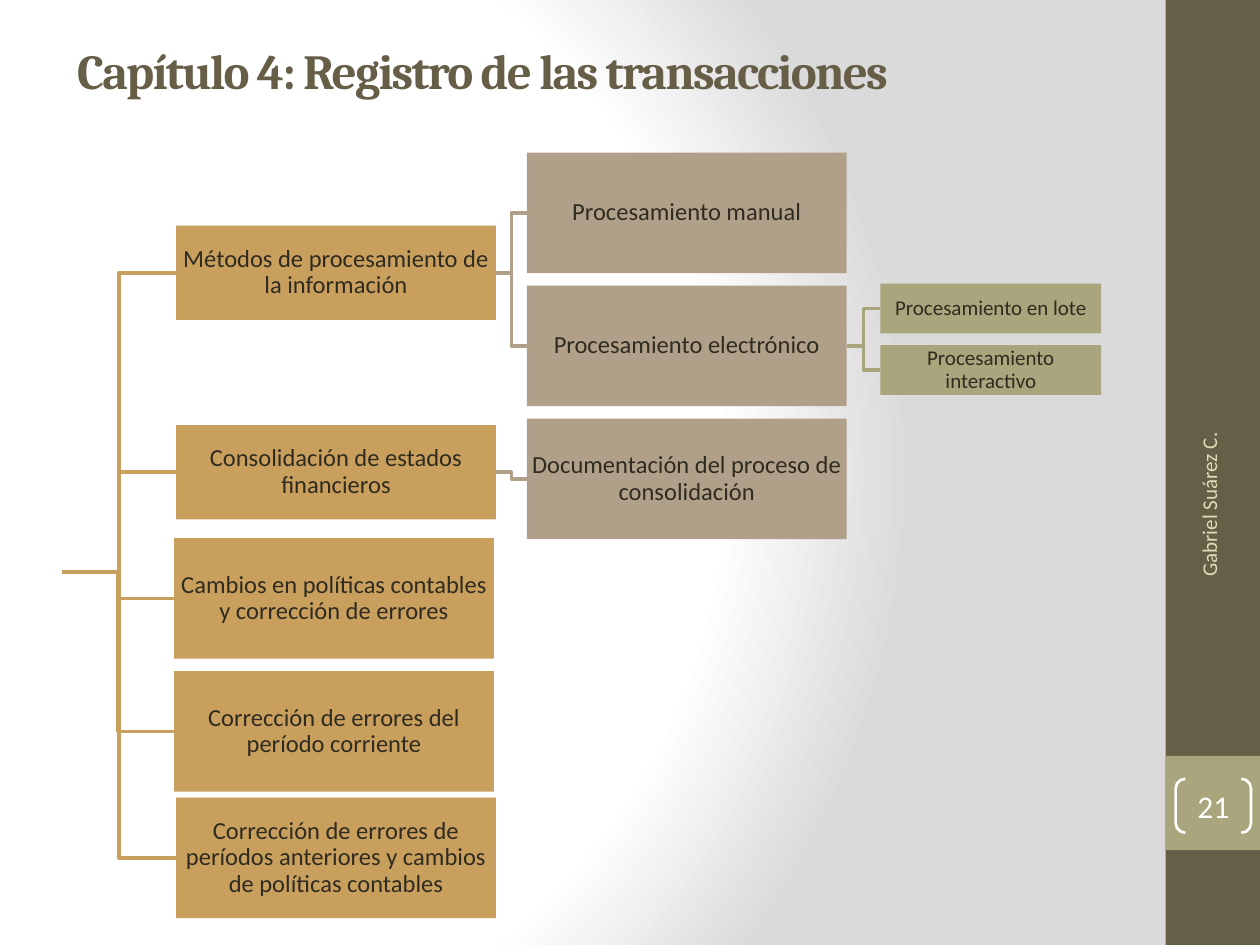
import pptx
import pptx.dml.color
import pptx.enum.shapes
import pptx.enum.text
import pptx.oxml
import pptx.oxml.ns
import pptx.util
from pptx.util import Cm

SHAPES = pptx.enum.shapes.MSO_SHAPE
ALIGN = pptx.enum.text.PP_ALIGN
COLORS = {
    "brown": "675E47", "green": "A9A57C", "gold": "C89F5D", "taupe": "B1A089",
    "ink": "2F2B20", "cream": "DFDCB7", "white": "FFFFFF", "gray": "DADADA",
}

TITLE = "Capítulo 4: Registro de las transacciones"
AUTHOR = "Gabriel Suárez C."
PAGE_NUMBER = "21"

# Levels of the tree: width in cm, text size in points, colour
LEVELS = {
    "topic": (6.45, 14, "gold"),
    "detail": (6.45, 14, "taupe"),
    "mode": (4.45, 12, "green"),
}
ROOT = (1.25, 11.53)

# name: (level, parent, left, top, height, text), lengths in cm
BOXES = {
    "methods": ("topic", None, 3.55, 4.55, 1.9, "Métodos de procesamiento de la información"),
    "manual": ("detail", "methods", 10.62, 3.08, 2.43, "Procesamiento manual"),
    "electronic": ("detail", "methods", 10.62, 5.76, 2.43, "Procesamiento electrónico"),
    "batch": ("mode", "electronic", 17.75, 5.72, 1, "Procesamiento en lote"),
    "interactive": ("mode", "electronic", 17.75, 6.96, 1, "Procesamiento interactivo"),
    "consolidation": ("topic", None, 3.55, 8.57, 1.9, "Consolidación de estados financieros"),
    "documentation": ("detail", "consolidation", 10.62, 8.44, 2.43,
                      "Documentación del proceso de consolidación"),
    "changes": ("topic", None, 3.51, 10.85, 2.43,
                "Cambios en políticas contables y corrección de errores"),
    "current": ("topic", None, 3.51, 13.53, 2.43,
                "Corrección de errores del período corriente"),
    "previous": ("topic", None, 3.55, 16.08, 2.43,
                 "Corrección de errores de períodos anteriores y cambios de políticas contables"),
}


def rgb(name):
    return pptx.dml.color.RGBColor.from_string(COLORS[name])


def set_background(slide):
    """Radial gradient, white at the left and gray toward the right."""
    slide.background.fill.gradient()
    old = slide.background._cSld.find(".//" + pptx.oxml.ns.qn("a:gradFill"))
    stops = "".join(
        f'<a:gs pos="{position}"><a:srgbClr val="{COLORS[color]}"/></a:gs>'
        for position, color in ((0, "white"), (75000, "white"), (100000, "gray")))
    gradient = pptx.oxml.parse_xml(
        f'<a:gradFill {pptx.oxml.ns.nsdecls("a")} rotWithShape="1"><a:gsLst>{stops}</a:gsLst>'
        '<a:path path="circle"><a:fillToRect l="20000" t="50000" r="100000" b="50000"/>'
        '</a:path></a:gradFill>')
    old.getparent().replace(old, gradient)


def write(shape, text, size, color, align, font="Calibri", inset=None):
    frame = shape.text_frame
    frame.word_wrap = True
    frame.vertical_anchor = pptx.enum.text.MSO_ANCHOR.MIDDLE
    if inset is not None:
        frame.margin_left = frame.margin_right = Cm(inset)
        frame.margin_top = frame.margin_bottom = Cm(inset)
    paragraph = frame.paragraphs[0]
    paragraph.text = text
    paragraph.alignment = align
    paragraph.font.size = pptx.util.Pt(size)
    paragraph.font.name = font
    paragraph.font.color.rgb = rgb(color)
    return paragraph


def add_block(slide, left, top, width, height, color):
    block = slide.shapes.add_shape(SHAPES.RECTANGLE, Cm(left), Cm(top), Cm(width), Cm(height))
    block.shadow.inherit = False
    block.fill.solid()
    block.fill.fore_color.rgb = rgb(color)
    block.line.fill.background()
    return block


def add_elbow(slide, start, end, color):
    """Open line that turns halfway between the two points."""
    middle = (start[0] + end[0]) / 2
    points = [start, (middle, start[1]), (middle, end[1]), end]
    first, *rest = [(Cm(x), Cm(y)) for x, y in points]
    builder = slide.shapes.build_freeform(*first)
    builder.add_line_segments(rest, close=False)
    elbow = builder.convert_to_shape()
    elbow.shadow.inherit = False
    elbow.fill.background()
    elbow.line.color.rgb = rgb(color)
    elbow.line.width = pptx.util.Pt(2)


def add_sidebar(slide):
    add_block(slide, 23.5, 0, 1.9, 19.05, "brown")
    add_block(slide, 23.5, 15.24, 1.9, 1.9, "green")
    author = slide.shapes.add_textbox(Cm(21.08), Cm(11.25), Cm(6.58), Cm(1.02))
    author.rotation = 270
    write(author, AUTHOR, 12, "cream", ALIGN.RIGHT)
    number = slide.shapes.add_shape(
        SHAPES.DOUBLE_BRACKET, Cm(23.7), Cm(15.7), Cm(1.52), Cm(1.09))
    number.adjustments[0] = 0.18
    number.shadow.inherit = False
    number.fill.background()
    number.line.color.rgb = rgb("white")
    number.line.width = pptx.util.Pt(1.5)
    write(number, PAGE_NUMBER, 18, "white", ALIGN.CENTER, inset=0)


def add_title(slide):
    title = slide.shapes.title
    title.left, title.top, title.width, title.height = Cm(1.3), Cm(0.33), Cm(21.16), Cm(2.16)
    paragraph = write(title, TITLE, 28, "brown", ALIGN.LEFT, "Cambria")
    paragraph.font.bold = True
    paragraph.runs[0].font._element.set("spc", "-100")


def add_tree(slide):
    for level, parent, left, top, height, _ in BOXES.values():
        start = ROOT
        if parent:
            parent_level, _, parent_left, parent_top, parent_height, _ = BOXES[parent]
            start = (parent_left + LEVELS[parent_level][0], parent_top + parent_height / 2)
        add_elbow(slide, start, (left, top + height / 2), LEVELS[level][2])
    for level, _, left, top, height, text in BOXES.values():
        width, size, color = LEVELS[level]
        block = add_block(slide, left, top, width, height, color)
        paragraph = write(block, text, size, "ink", ALIGN.CENTER, inset=0.03)
        paragraph.line_spacing = 0.9


def main():
    presentation = pptx.Presentation()
    presentation.slide_width, presentation.slide_height = Cm(25.4), Cm(19.05)
    slide = presentation.slides.add_slide(presentation.slide_layouts[5])
    set_background(slide)
    add_sidebar(slide)
    add_title(slide)
    add_tree(slide)
    presentation.save("out.pptx")


if __name__ == "__main__":
    main()
